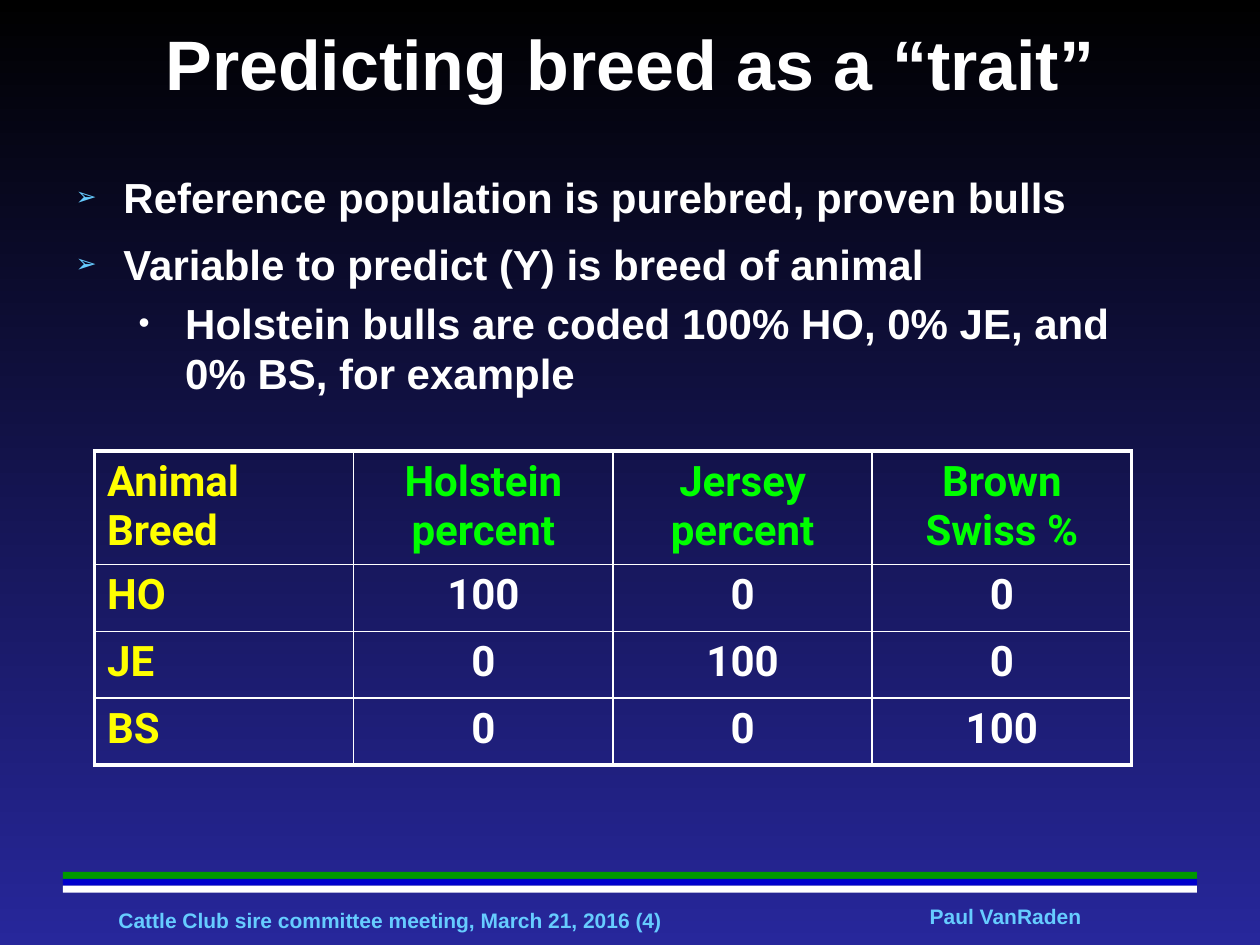
import pptx
import pptx.util
import pptx.dml.color
import pptx.enum.shapes
import pptx.enum.text
import pptx.oxml.ns
from lxml import etree

Inches = pptx.util.Inches
Pt = pptx.util.Pt
RGBColor = pptx.dml.color.RGBColor
Align = pptx.enum.text.PP_ALIGN
Anchor = pptx.enum.text.MSO_ANCHOR

BLACK = RGBColor(0x00, 0x00, 0x00)
NAVY = RGBColor(0x27, 0x27, 0x9B)
WHITE = RGBColor(0xFF, 0xFF, 0xFF)
SKY = RGBColor(0x66, 0xCC, 0xFF)
YELLOW = RGBColor(0xFF, 0xFF, 0x00)
LIME = RGBColor(0x00, 0xFF, 0x00)
GREEN = RGBColor(0x00, 0x99, 0x00)
BLUE = RGBColor(0x00, 0x00, 0xCC)

# Per level: bullet, colour, size in percent, left margin, hanging, space before
BULLETS = [
    ("➢", SKY, 60, 0.38, 0.38, 9.6),
    ("•", WHITE, 75, 0.87, 0.37, 4.8),
]


def add_xml(parent, tag, **attributes):
    return etree.SubElement(parent, pptx.oxml.ns.qn(tag), attributes)


class SlideBuilder:
    text_font = "Arial"
    table_font = "Roboto"
    body_size = 24
    thin, thick = 1, 2.25

    def __init__(self, deck):
        self.page = deck.slides.add_slide(deck.slide_layouts[1])

    def background(self, top, bottom):
        fill = self.page.background.fill
        fill.gradient()
        fill.gradient_angle = 270
        for stop, color in zip(fill.gradient_stops, (top, bottom)):
            stop.color.rgb = color

    def style(self, para, size, color, align=Align.LEFT, name=text_font):
        para.alignment = align
        para.font.name = name
        para.font.size = Pt(size)
        para.font.bold = True
        para.font.color.rgb = color

    def place(self, shape, left, top, width, height):
        shape.left, shape.top = Inches(left), Inches(top)
        shape.width, shape.height = Inches(width), Inches(height)
        shape.text_frame.auto_size = pptx.enum.text.MSO_AUTO_SIZE.NONE

    def title(self, text, *bounds):
        title = self.page.shapes.title
        self.place(title, *bounds)
        title.text_frame.vertical_anchor = Anchor.MIDDLE
        title.text_frame.text = text
        self.style(title.text_frame.paragraphs[0], 40, WHITE, Align.CENTER)

    def bullets(self, items, *bounds):
        body = self.page.placeholders[1]
        self.place(body, *bounds)
        frame = body.text_frame
        frame.text = "\n".join(text for level, text in items)
        for para, (level, text) in zip(frame.paragraphs, items):
            mark, color, percent, margin, hanging, space = BULLETS[level]
            para.level = level
            para.space_before = Pt(space)
            props = para._p.get_or_add_pPr()
            props.set("marL", str(Inches(margin)))
            props.set("indent", str(-Inches(hanging)))
            add_xml(add_xml(props, "a:buClr"), "a:srgbClr", val=str(color))
            add_xml(props, "a:buSzPct", val=str(percent * 1000))
            add_xml(props, "a:buChar", char=mark)
            self.style(para, self.body_size, WHITE)

    def bar(self, color, left, top, width, height):
        bar = self.page.shapes.add_shape(
            pptx.enum.shapes.MSO_SHAPE.RECTANGLE,
            Inches(left), Inches(top), Inches(width), Inches(height))
        bar.shadow.inherit = False
        bar.fill.solid()
        bar.fill.fore_color.rgb = color
        bar.line.fill.background()

    def footer(self, text, left, top, width, height, align=Align.LEFT, wrap=True):
        box = self.page.shapes.add_textbox(
            Inches(left), Inches(top), Inches(width), Inches(height))
        frame = box.text_frame
        frame.word_wrap = wrap
        frame.vertical_anchor = Anchor.MIDDLE
        frame.margin_left = frame.margin_right = 0
        frame.margin_top = frame.margin_bottom = 0
        frame.text = text
        self.style(frame.paragraphs[0], 12, SKY, align)

    def borders(self, cell, widths):
        props = cell._tc.get_or_add_tcPr()
        for tag, width in widths.items():
            line = add_xml(props, tag, w=str(Pt(width)))
            add_xml(add_xml(line, "a:solidFill"), "a:srgbClr", val=str(WHITE))

    def table(self, rows, heights, left, top, width):
        last_row, last_column = len(rows) - 1, len(rows[0]) - 1
        table = self.page.shapes.add_table(
            len(rows), len(rows[0]), Inches(left), Inches(top),
            Inches(width), Inches(sum(heights))).table
        table.first_row = table.horz_banding = False
        for i, values in enumerate(rows):
            table.rows[i].height = Inches(heights[i])
            for j, value in enumerate(values):
                cell = table.cell(i, j)
                cell.text = value
                color = YELLOW if j == 0 else LIME if i == 0 else WHITE
                align = Align.LEFT if j == 0 else Align.CENTER
                self.style(cell.text_frame.paragraphs[0], self.body_size,
                           color, align, self.table_font)
                outer = {"a:lnL": j == 0, "a:lnR": j == last_column,
                         "a:lnT": i == 0, "a:lnB": i == last_row}
                self.borders(cell, {tag: self.thick if edge else self.thin
                                    for tag, edge in outer.items()})
                cell.fill.background()


def main():
    deck = pptx.Presentation()
    deck.slide_width, deck.slide_height = Inches(10), Inches(7.5)
    slide = SlideBuilder(deck)
    slide.background(BLACK, NAVY)

    # Footer stripes and texts
    for index, color in enumerate((GREEN, BLUE, WHITE)):
        slide.bar(color, 0.5, 6.92 + index * 0.055, 9, 0.055)
    slide.footer("Cattle Club sire committee meeting, March 21, 2016 (4)",
                 0.94, 7.2, 4.72, 0.2)
    slide.footer("Paul VanRaden", 7.37, 7.17, 1.22, 0.2, Align.CENTER, False)

    # Title and list
    slide.title("Predicting breed as a “trait”", 0.5, 0.2, 9, 0.6)
    slide.bullets([
        (0, "Reference population is purebred, proven bulls"),
        (0, "Variable to predict (Y) is breed of animal"),
        (1, "Holstein bulls are coded 100% HO, 0% JE, and 0% BS, for example"),
    ], 0.5, 1.31, 8.83, 2.44)

    # Breed coding table: each breed is 100 in its own column
    breeds = ["HO", "JE", "BS"]
    header = ["Animal Breed", "Holstein percent", "Jersey percent", "Brown Swiss %"]
    coding = [[row] + ["100" if row == column else "0" for column in breeds]
              for row in breeds]
    slide.table([header] + coding, [0.89] + [0.53] * 3, 0.75, 3.58, 8.23)

    deck.save("out.pptx")


if __name__ == "__main__":
    main()
